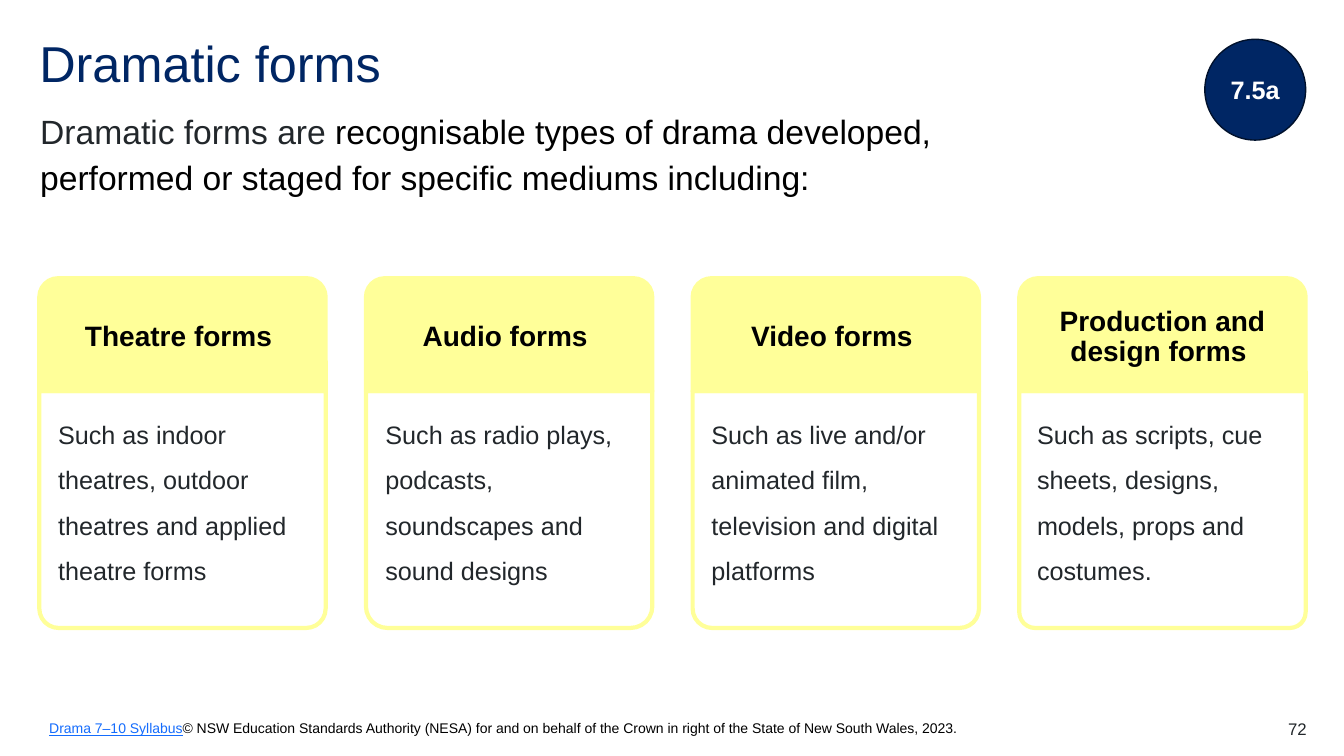
from dataclasses import dataclass

import pptx
import pptx.dml.color
import pptx.enum.shapes
import pptx.enum.text
import pptx.util

Inches = pptx.util.Inches
Pt = pptx.util.Pt
RGBColor = pptx.dml.color.RGBColor
Shape = pptx.enum.shapes.MSO_SHAPE
Align = pptx.enum.text.PP_ALIGN
Anchor = pptx.enum.text.MSO_ANCHOR

NAVY = RGBColor(0x00, 0x26, 0x64)
DARK_NAVY = RGBColor(0x00, 0x11, 0x2C)
CHARCOAL = RGBColor(0x22, 0x27, 0x2B)
YELLOW = RGBColor(0xFF, 0xFF, 0x99)
LINK_BLUE = RGBColor(0x14, 0x6C, 0xFD)
BLACK = RGBColor(0, 0, 0)
WHITE = RGBColor(0xFF, 0xFF, 0xFF)

MARGIN = 0.39
CARD_WIDTH, CARD_PITCH = 2.84, 3.24
CARD_TOP, HEADING_HEIGHT, DETAIL_HEIGHT = 2.76, 1.12, 2.35
DEFAULT_INSETS = (0.1, 0.05, 0.1, 0.05)


@dataclass
class Run:
    text: str
    color: RGBColor
    underline: bool = False


@dataclass
class FormCard:
    heading: str
    detail: str
    rounding: float


CARDS = [
    FormCard("Theatre forms ",
             "Such as indoor theatres, outdoor theatres and applied theatre forms", 0.082),
    FormCard("Audio forms ",
             "Such as radio plays, podcasts, soundscapes and sound designs", 0.091),
    FormCard("Video forms ",
             "Such as live and/or animated film, television and digital platforms", 0.082),
    FormCard("Production and design forms ",
             "Such as scripts, cue sheets, designs, models, props and costumes.", 0.067),
]


def write(shape, *runs: Run, size: float, bold: bool = False, align=Align.LEFT,
          anchor=Anchor.TOP, insets=DEFAULT_INSETS, line_spacing: float = 1.0,
          before: float = 0, after: float = 0) -> None:
    """Fill a shape or text box with one formatted paragraph."""
    frame = shape.text_frame
    frame.word_wrap = True
    frame.vertical_anchor = anchor
    (frame.margin_left, frame.margin_top,
     frame.margin_right, frame.margin_bottom) = map(Inches, insets)
    paragraph = frame.paragraphs[0]
    paragraph.alignment = align
    paragraph.line_spacing = line_spacing
    paragraph.space_before, paragraph.space_after = Pt(before), Pt(after)
    for part in runs:
        run = paragraph.add_run()
        run.text = part.text
        run.font.name = "Arial"
        run.font.size = Pt(size)
        run.font.bold = bold
        run.font.underline = part.underline
        run.font.color.rgb = part.color


def add_box(slide, left: float, top: float, width: float, height: float):
    return slide.shapes.add_textbox(*map(Inches, (left, top, width, height)))


def add_outlined(slide, kind, left: float, top: float, width: float, height: float,
                 *, line: RGBColor, weight: float, fill: RGBColor | None = None):
    shape = slide.shapes.add_shape(kind, *map(Inches, (left, top, width, height)))
    shape.shadow.inherit = False
    if fill is None:
        shape.fill.background()
    else:
        shape.fill.solid()
        shape.fill.fore_color.rgb = fill
    shape.line.color.rgb = line
    shape.line.width = Pt(weight)
    return shape


def add_card(slide, card: FormCard, left: float) -> None:
    heading = add_outlined(slide, Shape.ROUND_2_SAME_RECTANGLE, left, CARD_TOP,
                           CARD_WIDTH, HEADING_HEIGHT, line=YELLOW, weight=3, fill=YELLOW)
    write(heading, Run(card.heading, BLACK), size=20, bold=True, align=Align.CENTER,
          anchor=Anchor.MIDDLE, insets=(0.17, 0.1, 0.17, 0.1), line_spacing=0.9)

    detail = add_outlined(slide, Shape.ROUND_2_SAME_RECTANGLE, left,
                          CARD_TOP + HEADING_HEIGHT, CARD_WIDTH, DETAIL_HEIGHT,
                          line=YELLOW, weight=3)
    detail.adjustments[0] = 0
    detail.adjustments[1] = card.rounding
    write(detail, Run(card.detail, CHARCOAL), size=18,
          insets=(0.13, 0.13, 0.17, 0.19), line_spacing=1.5, after=12)


def main() -> None:
    deck = pptx.Presentation()
    deck.slide_width, deck.slide_height = Inches(13.33), Inches(7.5)
    slide = deck.slides.add_slide(deck.slide_layouts[6])

    # Title, outcome badge and introduction
    title = add_box(slide, MARGIN, 0.39, 12.56, 0.6)
    write(title, Run("Dramatic forms", NAVY), size=36, insets=(0, 0, 0, 0),
          line_spacing=0.9)
    badge = add_outlined(slide, Shape.OVAL, 11.95, 0.39, 1, 1,
                         line=DARK_NAVY, weight=1, fill=NAVY)
    write(badge, Run("7.5a", WHITE), size=18, bold=True, align=Align.CENTER,
          anchor=Anchor.MIDDLE)
    introduction = add_box(slide, 0.3, 0.99, 9.71, 0.99)
    write(introduction, Run("Dramatic forms are ", CHARCOAL),
          Run("recognisable types of drama developed, performed or staged "
              "for specific mediums including:", BLACK),
          size=24, line_spacing=1.15, before=3, after=3)

    # Cards
    for index, card in enumerate(CARDS):
        add_card(slide, card, MARGIN + index * CARD_PITCH)

    # Footer
    credit = add_box(slide, MARGIN, 7.09, 9.3, 0.27)
    write(credit, Run("Drama 7–10 Syllabus", LINK_BLUE, underline=True),
          Run("© NSW Education Standards Authority (NESA) for and on behalf of the "
              "Crown in right of the State of New South Wales, 2023.", BLACK), size=10)
    page_number = add_box(slide, 12.17, 7.13, 0.79, 0.2)
    write(page_number, Run("72", CHARCOAL), size=12, align=Align.RIGHT,
          insets=(0, 0, 0, 0))

    deck.save("out.pptx")


if __name__ == "__main__":
    main()
